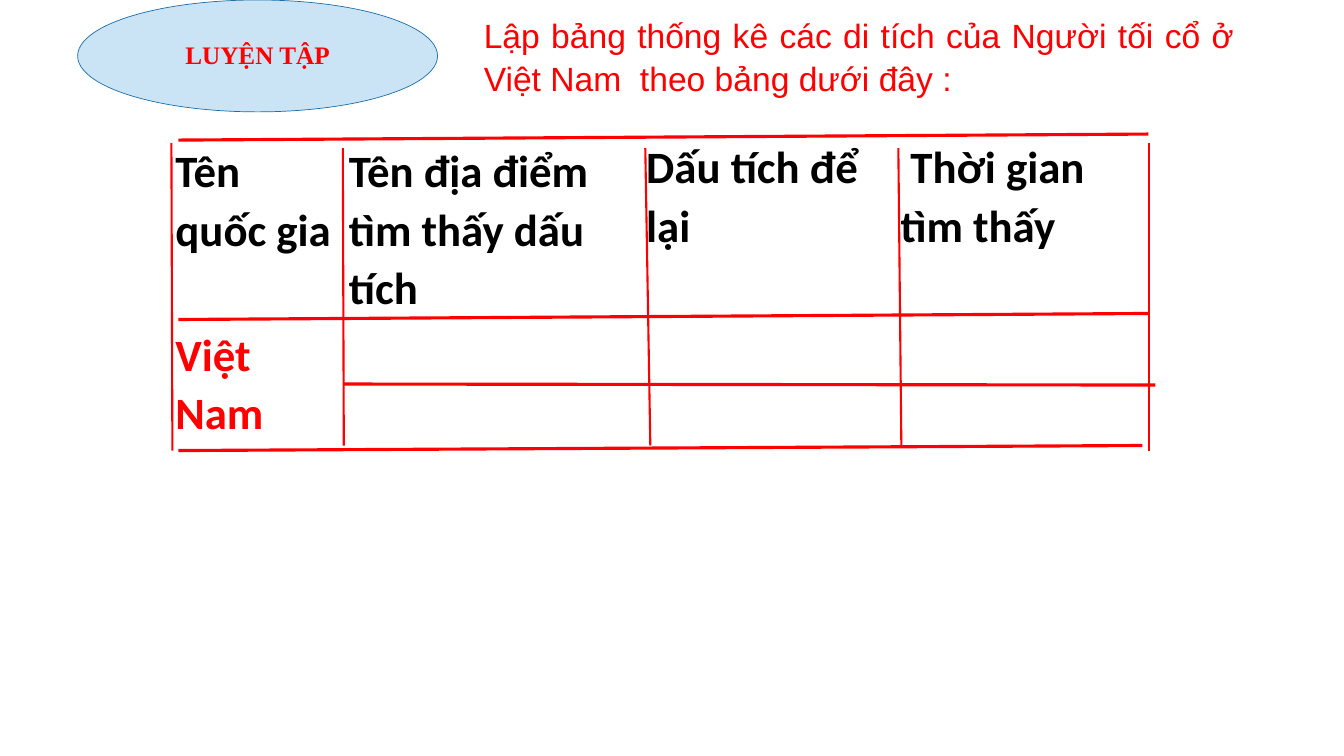
from lxml import etree
from pptx import Presentation
from pptx.dml.color import RGBColor
from pptx.enum import shapes, text
from pptx.oxml.ns import qn
from pptx.util import Inches, Pt

# Content
TITLE = "LUYỆN TẬP"
TASK = "Lập bảng thống kê các di tích của Người tối cổ ở  Việt Nam  theo bảng dưới đây :"
HEADERS = ["Tên quốc gia", "Tên địa điểm tìm thấy dấu tích",
           "Dấu tích để lại", " Thời gian tìm thấy"]
COUNTRY = "Việt Nam"

COLORS = {"red": "FF0000", "black": "000000", "white": "FFFFFF",
          "oval": "CAE4F6", "outline": "1D6FA9"}

# Table geometry and cell margins per column, in inches
TABLE_LEFT, TABLE_TOP = 1.7, 1.36
COLUMN_WIDTHS = [1.72, 2.99, 2.52, 2.52]
ROW_HEIGHTS = [1.82, 0.9, 0.9]
HEADER_MARGINS = [0.04, 0.04, 0, 0]

# Hand-drawn rules by weight in points: (x1, y1, x2, y2)
RULES = {
    2.25: [(3.41, 3.81, 11.46, 3.82), (1.77, 4.47, 11.33, 4.42),
           (1.77, 3.17, 11.39, 3.11), (1.77, 1.39, 11.39, 1.33)],
    1.5: [(3.4, 1.47, 3.41, 4.42), (6.4, 1.47, 6.45, 4.42),
          (8.91, 1.47, 8.94, 4.42), (11.4, 1.42, 11.4, 4.47),
          (1.7, 1.42, 1.71, 4.47)],
}


def color(name):
    return RGBColor.from_string(COLORS[name])


def write(frame, words, size, font, ink, bold=False, spacing=1.07, align=None):
    frame.text = words
    paragraph = frame.paragraphs[0]
    paragraph.line_spacing = spacing
    paragraph.alignment = align
    style = paragraph.runs[0].font
    style.size, style.name, style.bold = Pt(size), font, bold
    style.color.rgb = color(ink)


def set_margins(item, margin):
    item.margin_left = item.margin_right = Inches(margin)
    item.margin_top = item.margin_bottom = Inches(margin)


presentation = Presentation()
presentation.slide_width, presentation.slide_height = Inches(13.33), Inches(7.5)
slide = presentation.slides.add_slide(presentation.slide_layouts[6])

# Table
table = slide.shapes.add_table(
    len(ROW_HEIGHTS), len(COLUMN_WIDTHS), Inches(TABLE_LEFT), Inches(TABLE_TOP),
    Inches(sum(COLUMN_WIDTHS)), Inches(sum(ROW_HEIGHTS))).table
table.first_row = table.horz_banding = False
for column, width in zip(table.columns, COLUMN_WIDTHS):
    column.width = Inches(width)
for row, height in zip(table.rows, ROW_HEIGHTS):
    row.height = Inches(height)
for cell in table.iter_cells():
    cell.fill.solid()
    cell.fill.fore_color.rgb = color("white")

table.cell(1, 0).merge(table.cell(2, 0))
entries = [(0, index, words, "black") for index, words in enumerate(HEADERS)]
entries.append((1, 0, COUNTRY, "red"))
for row_index, column_index, words, ink in entries:
    cell = table.cell(row_index, column_index)
    set_margins(cell, HEADER_MARGINS[column_index])
    write(cell.text_frame, words, 32, "Calibri", ink, bold=True)

# Red rules over the table
for weight, lines in RULES.items():
    for ends in lines:
        rule = slide.shapes.add_connector(
            shapes.MSO_CONNECTOR.STRAIGHT, *[Inches(value) for value in ends])
        rule.line.color.rgb = color("red")
        rule.line.width = Pt(weight)
        etree.SubElement(rule._element.spPr, qn("a:effectLst"))

# Task
task = slide.shapes.add_textbox(Inches(4.7), Inches(0.07), Inches(7.75), Inches(1.4))
task.text_frame.word_wrap = True
write(task.text_frame, TASK, 24, "Arial", "red", align=text.PP_ALIGN.JUSTIFY)

# Title oval
oval = slide.shapes.add_shape(
    shapes.MSO_SHAPE.OVAL, Inches(0.77), Inches(0), Inches(3.57), Inches(1.11))
oval.shadow.inherit = False
oval.fill.solid()
oval.fill.fore_color.rgb = color("oval")
oval.line.color.rgb = color("outline")
oval.line.width = Pt(0.5)
set_margins(oval.text_frame, 0)
oval.text_frame.vertical_anchor = text.MSO_ANCHOR.MIDDLE
write(oval.text_frame, TITLE, 18, "Times New Roman", "red", bold=True,
      spacing=0.9, align=text.PP_ALIGN.CENTER)

presentation.save("out.pptx")
